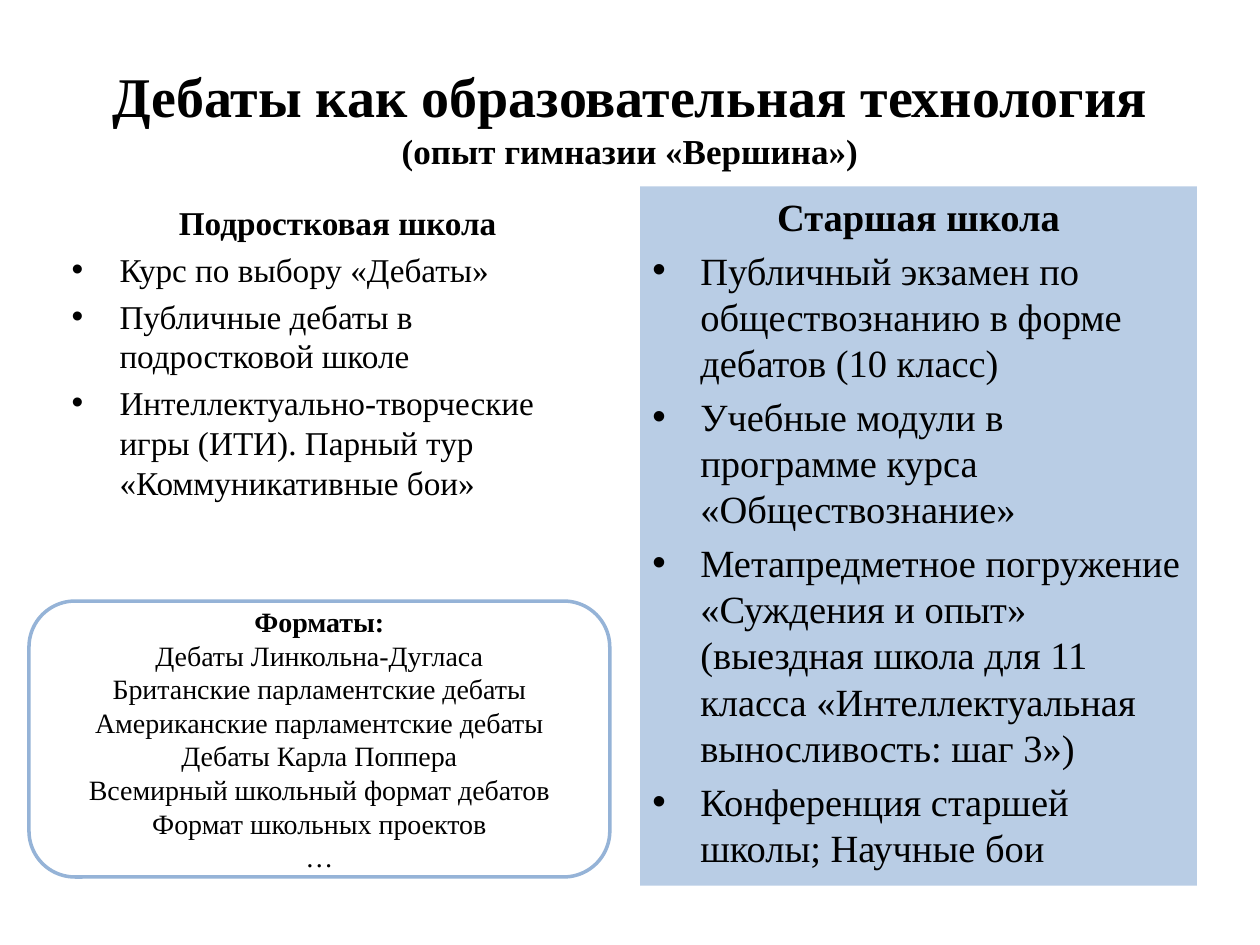
from dataclasses import dataclass

import pptx
import pptx.dml.color
import pptx.enum.shapes
import pptx.enum.text
import pptx.oxml
import pptx.oxml.ns
import pptx.util

Inches = pptx.util.Inches
Pt = pptx.util.Pt
Align = pptx.enum.text.PP_ALIGN
Anchor = pptx.enum.text.MSO_ANCHOR
Shape = pptx.enum.shapes.MSO_SHAPE


@dataclass(frozen=True)
class Theme:
    """Colours, font and type sizes of the slide."""
    font: str = "Times New Roman"
    ink: str = "000000"
    panel: str = "B9CDE5"
    outline: str = "95B3D7"
    title: int = 32
    subtitle: int = 20
    middle_school: int = 19
    senior_school: int = 22
    formats: int = 16
    indent: float = 0.38


THEME = Theme()


def rgb(value):
    """Turn a hex string into a colour."""
    return pptx.dml.color.RGBColor.from_string(value)


def add_text(para, text, size, bold=False):
    """Append a formatted span to a paragraph."""
    span = para.add_run()
    span.text = text
    span.font.name = THEME.font
    span.font.size = Pt(size)
    span.font.bold = bold
    span.font.color.rgb = rgb(THEME.ink)


def add_box(page, area, kind=Shape.RECTANGLE, fill=None, line=None, anchor=Anchor.TOP):
    """Place a shape on the page and return it ready for text."""
    box = page.shapes.add_shape(kind, *(Inches(length) for length in area))
    box.shadow.inherit = False
    if fill:
        box.fill.solid()
        box.fill.fore_color.rgb = rgb(fill)
    else:
        box.fill.background()
    if line:
        box.line.color.rgb = rgb(line)
        box.line.width = Pt(2)
    else:
        box.line.fill.background()
    box.text_frame.word_wrap = True
    box.text_frame.vertical_anchor = anchor
    return box


def add_paragraphs(box, count, align):
    """Return the given number of aligned paragraphs of a box."""
    frame = box.text_frame
    paras = [frame.paragraphs[0]] + [frame.add_paragraph() for _ in range(count - 1)]
    for para in paras:
        para.alignment = align
    return paras


def add_bullet(para):
    """Give a paragraph a hanging round bullet."""
    properties = para._p.get_or_add_pPr()
    properties.set("marL", str(Inches(THEME.indent)))
    properties.set("indent", str(-Inches(THEME.indent)))
    for tag, name, value in (("a:buFont", "typeface", "Arial"), ("a:buChar", "char", "•")):
        mark = pptx.oxml.parse_xml(f'<{tag} {pptx.oxml.ns.nsdecls("a")} {name}="{value}"/>')
        properties.append(mark)


def add_title(page, area, title, subtitle):
    """Place the heading and its smaller second line."""
    box = add_box(page, area, anchor=Anchor.MIDDLE)
    para = add_paragraphs(box, 1, Align.CENTER)[0]
    add_text(para, title, THEME.title, bold=True)
    para.add_line_break()
    add_text(para, subtitle, THEME.subtitle, bold=True)


def add_school(page, area, heading, items, size, fill=None):
    """Place a school column with a centred heading and bullets."""
    box = add_box(page, area, fill=fill)
    head, *paras = add_paragraphs(box, len(items) + 1, Align.LEFT)
    head.alignment = Align.CENTER
    add_text(head, heading, size, bold=True)
    for para, item in zip(paras, items):
        add_bullet(para)
        add_text(para, item, size)
    for para in (head, *paras):
        para.space_before = Pt(round(size * 0.2, 1))


def add_formats(page, area, heading, items):
    """Place the rounded frame that lists the debate formats."""
    box = add_box(page, area, Shape.ROUNDED_RECTANGLE, line=THEME.outline, anchor=Anchor.MIDDLE)
    lines = [heading, *items]
    for para, line in zip(add_paragraphs(box, len(lines), Align.CENTER), lines):
        add_text(para, line, THEME.formats, bold=line == heading)


def main():
    """Build the slide and save it."""
    deck = pptx.Presentation()
    deck.slide_width, deck.slide_height = Inches(10), Inches(7.5)
    page = deck.slides.add_slide(deck.slide_layouts[6])
    add_title(page, (0.5, 0.3, 9, 1.25),
              "Дебаты как образовательная технология", "(опыт гимназии «Вершина»)")
    add_school(page, (0.47, 1.56, 4.42, 4.95), "Подростковая школа", [
        "Курс по выбору «Дебаты»",
        "Публичные дебаты в подростковой школе",
        "Интеллектуально-творческие игры (ИТИ). Парный тур «Коммуникативные бои»",
    ], THEME.middle_school)
    add_school(page, (5.08, 1.48, 4.42, 5.55), "Старшая школа", [
        "Публичный экзамен по обществознанию в форме дебатов (10 класс)",
        "Учебные модули в программе курса «Обществознание»",
        "Метапредметное погружение «Суждения и опыт» (выездная школа для 11 класса "
        "«Интеллектуальная выносливость: шаг 3»)",
        "Конференция старшей школы; Научные бои",
    ], THEME.senior_school, fill=THEME.panel)
    add_formats(page, (0.23, 4.77, 4.61, 2.19), "Форматы:", [
        "Дебаты Линкольна-Дугласа",
        "Британские парламентские дебаты",
        "Американские парламентские дебаты",
        "Дебаты Карла Поппера",
        "Всемирный школьный формат дебатов",
        "Формат школьных проектов",
        "…",
    ])
    deck.save("out.pptx")


if __name__ == "__main__":
    main()
